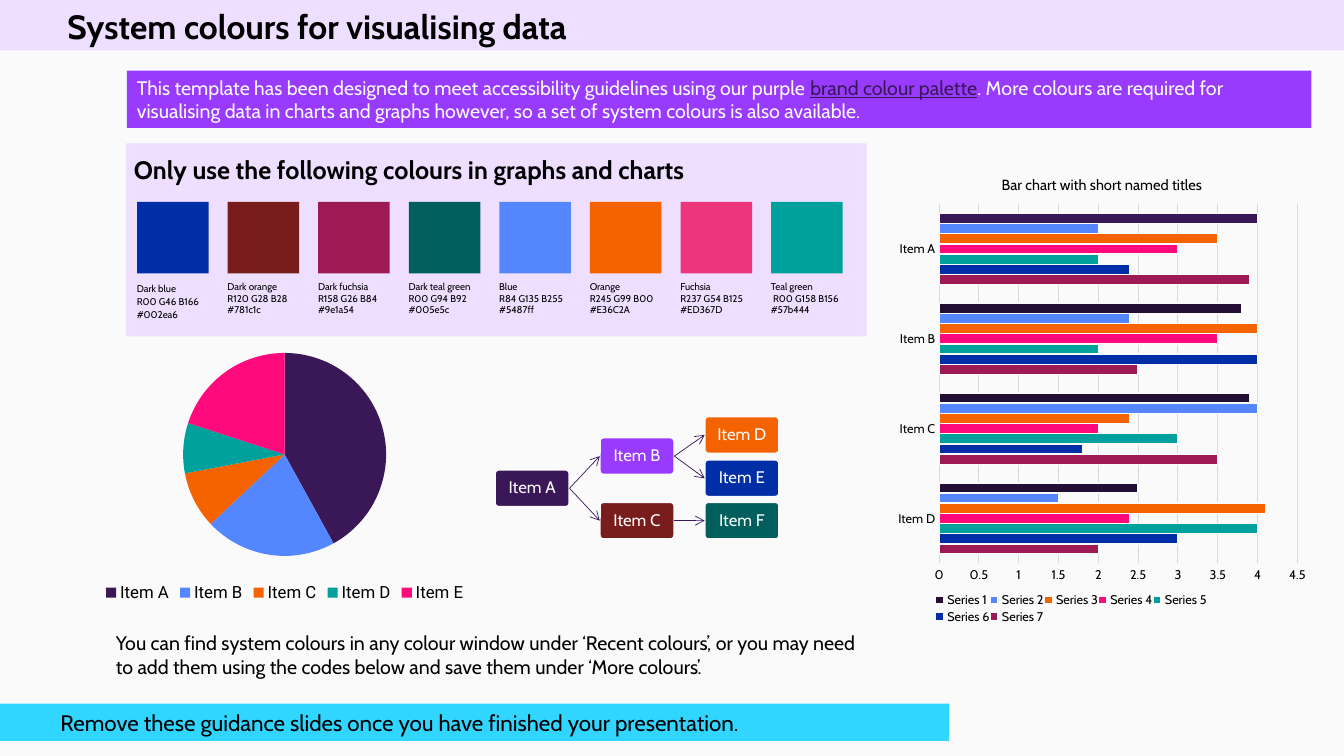
from lxml.etree import SubElement
from pptx import Presentation
from pptx.chart.data import CategoryChartData
from pptx.dml.color import RGBColor
from pptx.enum.chart import XL_CHART_TYPE as ChartType, XL_LEGEND_POSITION as LegendPosition
from pptx.enum.chart import XL_TICK_MARK as TickMark
from pptx.enum.shapes import MSO_CONNECTOR as Connector, MSO_SHAPE as Shape
from pptx.enum.text import MSO_ANCHOR as Anchor, PP_ALIGN as Align
from pptx.oxml.ns import qn
from pptx.util import Pt

BLACK, OFF_WHITE, LILAC, GREY = "000000", "FAFAFA", "EEDEFF", "D9D9D9"
PURPLE, DARK_PURPLE, CYAN = "993BFF", "3A1857", "30D6FF"
DARK_BLUE, DARK_ORANGE, DARK_FUCHSIA, DARK_TEAL = "002EA6", "781C1C", "9E1A54", "005E5C"
BLUE, ORANGE, FUCHSIA, TEAL, PINK = "5487FF", "F56300", "ED357D", "00A19D", "FF097D"

SWATCHES = [
    (DARK_BLUE, "Dark blue", "R00 G46 B166", "#002ea6"),
    (DARK_ORANGE, "Dark orange", "R120 G28 B28", "#781c1c"),
    (DARK_FUCHSIA, "Dark fuchsia", "R158 G26 B84", "#9e1a54"),
    (DARK_TEAL, "Dark teal green", "R00 G94 B92", "#005e5c"),
    (BLUE, "Blue", "R84 G135 B255", "#5487ff"),
    (ORANGE, "Orange", "R245 G99 B00", "#E36C2A"),
    (FUCHSIA, "Fuchsia", "R237 G54 B125", "#ED367D"),
    (TEAL, "Teal green", " R00 G158 B156", "#57b444"),
]
PIE_ITEMS = [("Item A", 42, DARK_PURPLE), ("Item B", 21, BLUE), ("Item C", 9, ORANGE),
             ("Item D", 8, TEAL), ("Item E", 20, PINK)]
BAR_SERIES = [
    ("Series 7", (2, 3.5, 2.5, 3.9), DARK_FUCHSIA),
    ("Series 6", (3, 1.8, 4, 2.4), DARK_BLUE),
    ("Series 5", (4, 3, 2, 2), TEAL),
    ("Series 4", (2.4, 2, 3.5, 3), PINK),
    ("Series 3", (4.1, 2.4, 4, 3.5), ORANGE),
    ("Series 2", (1.5, 4, 2.4, 2), BLUE),
    ("Series 1", (2.5, 3.9, 3.8, 4), "230E34"),
]
# Node: offset from the tree's corner, fill
TREE_NODES = {
    "A": (0, 38.1, DARK_PURPLE), "B": (74.9, 15.1, "993AFF"), "C": (74.9, 61.2, DARK_ORANGE),
    "D": (149.8, 0, ORANGE), "E": (149.8, 30.9, DARK_BLUE), "F": (149.8, 61.2, DARK_TEAL),
}
TREE_LINKS = ["AB", "AC", "BD", "BE", "CF"]


def rgb(color):
    return RGBColor.from_string(color)


def set_font(font, size, color=BLACK, bold=False, name="Cabin"):
    font.name, font.size, font.bold = name, Pt(size), bold
    font.color.rgb = rgb(color)


def fill_with(target, color):
    target.fill.solid()
    target.fill.fore_color.rgb = rgb(color)


def outline(line, color, width):
    line.color.rgb = rgb(color)
    line.width = Pt(width)


def add_block(slide, left, top, width, height, color, kind=Shape.RECTANGLE):
    shape = slide.shapes.add_shape(kind, Pt(left), Pt(top), Pt(width), Pt(height))
    shape.shadow.inherit = False
    fill_with(shape, color)
    shape.line.fill.background()
    shape.text_frame.word_wrap = True
    return shape


def add_text(slide, left, top, width, height, lines, size, bold=False, spacing=None):
    box = slide.shapes.add_textbox(Pt(left), Pt(top), Pt(width), Pt(height))
    frame = box.text_frame
    frame.word_wrap = True
    frame.text = "\n".join(lines)
    for paragraph in frame.paragraphs:
        paragraph.line_spacing = spacing
        set_font(paragraph.font, size, bold=bold)
    return frame


def add_header(slide, left, top, width, height):
    add_block(slide, left, top, width, height, LILAC)
    title = add_text(slide, left + 41, top + 13, width - 132, 15,
                     ["System colours for visualising data"], 24, True, 0.9)
    title.vertical_anchor = Anchor.MIDDLE


def add_introduction(slide, left, top, width, height):
    banner = add_block(slide, left, top, width, height, PURPLE)
    paragraph = banner.text_frame.paragraphs[0]
    paragraph.alignment = Align.LEFT
    for text, linked in [
        ("This template has been designed to meet accessibility guidelines using our purple ", False),
        ("brand colour palette", True),
        (". More colours are required for visualising data in charts and graphs however, "
         "so a set of system colours is also available.", False),
    ]:
        run = paragraph.add_run()
        run.text = text
        set_font(run.font, 14, DARK_PURPLE if linked else OFF_WHITE)
        run.font.underline = linked


def add_palette(slide, left, top, width, height):
    add_block(slide, left, top, width, height, LILAC)
    add_text(slide, left - 1.4, top + 4.4, 434, 29,
             ["Only use the following colours in graphs and charts"], 18, True)
    for index, (color, *label) in enumerate(SWATCHES):
        swatch_left = left + 7.9 + index * 64.7
        add_block(slide, swatch_left, top + 41.8, 51.1, 51.1, color)
        add_text(slide, swatch_left - 7.2, top + 94.4, 75, 33, label, 7,
                 spacing=1.15 if index == 0 else None)


def set_layout(element, index, **fractions):
    """Fix a chart part's place, as fractions of the chart's size."""
    for old in element.findall(qn("c:layout")):
        element.remove(old)
    layout = SubElement(element, qn("c:layout"))
    element.insert(index, layout)
    manual = SubElement(layout, qn("c:manualLayout"))
    if "w" in fractions and element.tag == qn("c:plotArea"):
        SubElement(manual, qn("c:layoutTarget")).set("val", "inner")
    for axis in "xy":
        SubElement(manual, qn(f"c:{axis}Mode")).set("val", "edge")
    for key, value in fractions.items():
        SubElement(manual, qn(f"c:{key}")).set("val", str(value))


def add_chart(slide, kind, box, categories, series, font_name, font_size, legend_size):
    data = CategoryChartData()
    data.categories = categories
    for name, values in series:
        data.add_series(name, values)
    chart = slide.shapes.add_chart(kind, *map(Pt, box), data).chart
    set_font(chart.font, font_size, name=font_name)
    chart.has_legend = True
    chart.legend.position = LegendPosition.BOTTOM
    chart.legend.include_in_layout = False
    set_font(chart.legend.font, legend_size, name=font_name)
    return chart, chart._chartSpace.xpath("c:chart/c:plotArea")[0]


def add_pie(slide, *box):
    names, values, colors = zip(*PIE_ITEMS)
    chart, plot_area = add_chart(slide, ChartType.PIE, box, names, [("Series 1", values)],
                                 "Roboto", 10, 12)
    chart.has_title = False
    set_layout(plot_area, 0, x=0.24, y=0.05, w=0.52, h=0.76)
    for index, color in enumerate(colors):
        fill_with(chart.plots[0].series[0].points[index].format, color)


def add_bars(slide, *box):
    chart, plot_area = add_chart(slide, ChartType.BAR_CLUSTERED, box,
                                 ["Item D", "Item C", "Item B", "Item A"],
                                 [row[:2] for row in BAR_SERIES], "Cabin", 9, 9)
    title = chart.chart_title
    title.text_frame.text = "Bar chart with short named titles"
    set_font(title.text_frame.paragraphs[0].font, 10.5)
    set_layout(title._element, 1, x=0.26, y=0.04)
    set_layout(plot_area, 0, x=0.12, y=0.11, w=0.84, h=0.76)
    set_layout(chart.legend._element, 1, x=0.11, y=0.93, w=0.64, h=0.07)

    plot = chart.plots[0]
    plot.gap_width, plot.overlap, plot.vary_by_categories = 182, 0, False
    for series, (_, _, color) in zip(plot.series, BAR_SERIES):
        fill_with(series.format, color)
        outline(series.format.line, OFF_WHITE, 1)
    top_bar = plot.series[-1].points[3].format
    fill_with(top_bar, DARK_PURPLE)
    outline(top_bar.line, OFF_WHITE, 1)

    for axis in (chart.category_axis, chart.value_axis):
        axis.major_tick_mark = axis.minor_tick_mark = TickMark.NONE
        set_font(axis.tick_labels.font, 9)
    outline(chart.category_axis.format.line, GREY, 0.75)
    scale = chart.value_axis
    scale.minimum_scale, scale.maximum_scale, scale.major_unit = 0, 4.5, 0.5
    scale.format.line.fill.background()
    outline(scale.major_gridlines.format.line, GREY, 0.75)


def add_tree(slide, left, top, node_width, node_height):
    nodes = {}
    for letter, (across, down, color) in TREE_NODES.items():
        node = add_block(slide, left + across, top + down, node_width, node_height, color,
                         Shape.ROUNDED_RECTANGLE)
        node.adjustments[0] = 0.1
        outline(node.line, OFF_WHITE, 1.5)
        frame = node.text_frame
        frame.margin_left = frame.margin_right = frame.margin_top = frame.margin_bottom = Pt(1)
        frame.vertical_anchor = Anchor.MIDDLE
        paragraph = frame.paragraphs[0]
        paragraph.text = f"Item {letter}"
        paragraph.alignment, paragraph.line_spacing = Align.CENTER, 0.9
        set_font(paragraph.font, 12, OFF_WHITE)
        nodes[letter] = node
    for parent, child in TREE_LINKS:
        arrow = slide.shapes.add_connector(Connector.STRAIGHT, 0, 0, 0, 0)
        arrow.begin_connect(nodes[parent], 3)
        arrow.end_connect(nodes[child], 1)
        outline(arrow.line, DARK_PURPLE, 0.5)
        SubElement(arrow.line._get_or_add_ln(), qn("a:tailEnd")).set("type", "arrow")
        SubElement(arrow._element.spPr, qn("a:effectLst"))


def add_footer(slide, left, top, width, height):
    footer = add_block(slide, left, top, width, height, CYAN)
    footer.text_frame.margin_left = Pt(43.2)
    paragraph = footer.text_frame.paragraphs[0]
    paragraph.text = "Remove these guidance slides once you have finished your presentation."
    paragraph.alignment = Align.LEFT
    set_font(paragraph.font, 16)


def main():
    presentation = Presentation()
    presentation.slide_width, presentation.slide_height = Pt(960), Pt(540)
    slide = presentation.slides.add_slide(presentation.slide_layouts[6])
    fill_with(slide.background, OFF_WHITE)
    add_footer(slide, 0, 502.6, 678, 26.6)
    add_header(slide, 0, 0, 960, 36)
    add_introduction(slide, 90.7, 50.4, 846, 41)
    add_palette(slide, 90, 102.4, 529, 138)
    add_pie(slide, 62.6, 242.6, 281.5, 190.8)
    add_tree(slide, 353.5, 297.4, 53.3, 26.6)
    add_bars(slide, 634.3, 108.7, 304.6, 337.7)
    add_text(slide, 75.6, 447.1, 552, 41, [
        "You can find system colours in any colour window under ‘Recent colours’, or you may need "
        "to add them using the codes below and save them under ‘More colours’."], 14)
    presentation.save("out.pptx")


if __name__ == "__main__":
    main()
